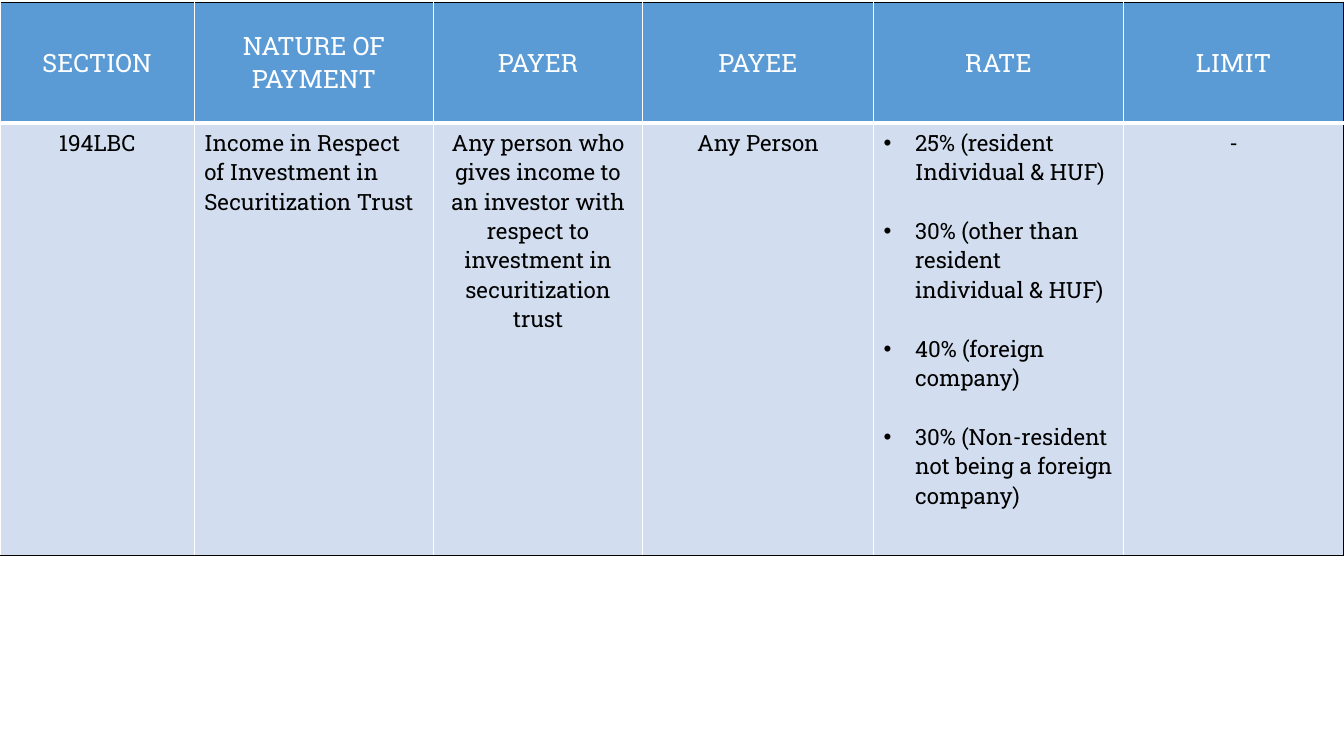
import pptx
import pptx.util
import pptx.dml.color
import pptx.enum.text
import pptx.oxml
import pptx.oxml.ns

PX = 9525  # EMU per px, 96 px to the inch
FONT = "Roboto Slab"
HUES = {"white": "FFFFFF", "black": "000000", "head": "5B9BD5", "body": "D2DEEF"}
ALIGN = pptx.enum.text.PP_ALIGN
ANCHOR = pptx.enum.text.MSO_ANCHOR

WIDTHS = [185, 228, 199, 220, 238, 210]
HEIGHTS = [115, 412]
HEADS = ["SECTION", "NATURE OF PAYMENT", "PAYER", "PAYEE", "RATE", "LIMIT"]
RATES = [
    "25% (resident Individual & HUF)",
    "30% (other than resident individual & HUF)",
    "40% (foreign company)",
    "30% (Non-resident not being a foreign company)",
]
# Each body cell: its paragraphs and its style
BODY = [
    (["194LBC"], "center"),
    (["Income in Respect of Investment in Securitization Trust"], "left"),
    (["Any person who gives income to an investor with respect to "
      "investment in securitization trust"], "center"),
    (["Any Person"], "center"),
    (RATES, "list"),
    (["-"], "center"),
]


def px(count):
    return pptx.util.Emu(count * PX)


def color(name):
    return pptx.dml.color.RGBColor.from_string(HUES[name])


def edge(cell, sides):
    """Draw borders; sides maps L, R, T, B in that order to (hue, points)."""
    props = cell._tc.get_or_add_tcPr()
    for spot, (side, (hue, size)) in enumerate(sides.items()):
        props.insert(spot, pptx.oxml.parse_xml(
            f'<a:ln{side} {pptx.oxml.ns.nsdecls("a")} w="{size * 12700}">'
            f'<a:solidFill><a:srgbClr val="{HUES[hue]}"/></a:solidFill>'
            f'</a:ln{side}>'))


def bullet(para):
    props = para._p.get_or_add_pPr()
    props.set("marL", str(px(30)))
    props.set("indent", str(px(-30)))
    props.append(pptx.oxml.parse_xml(
        f'<a:buFont {pptx.oxml.ns.nsdecls("a")} typeface="Arial"/>'))
    props.append(pptx.oxml.parse_xml(
        f'<a:buChar {pptx.oxml.ns.nsdecls("a")} char="•"/>'))


def write(cell, lines, style, size, hue):
    frame = cell.text_frame
    for spot, line in enumerate(lines):
        para = frame.add_paragraph() if spot else frame.paragraphs[0]
        para.alignment = ALIGN.CENTER if style == "center" else ALIGN.LEFT
        if spot:
            para.space_before = pptx.util.Pt(21)
        if style == "list":
            bullet(para)
        run = para.add_run()
        run.text = line
        run.font.name = FONT
        run.font.size = pptx.util.Pt(size)
        run.font.bold = False
        run.font.color.rgb = color(hue)


def paint(cell, fill, sides):
    cell.fill.solid()
    cell.fill.fore_color.rgb = color(fill)
    edge(cell, sides)


def grid(slide, left, top, width, height):
    """Place the rate table in the given box."""
    table = slide.shapes.add_table(
        len(HEIGHTS), len(WIDTHS), px(left), px(top), px(width), px(height)).table
    table.first_row = table.horz_banding = False
    for col, size in zip(table.columns, WIDTHS):
        col.width = px(size)
    for row, size in zip(table.rows, HEIGHTS):
        row.height = px(size)

    last = len(WIDTHS) - 1
    for spot, (head, (lines, style)) in enumerate(zip(HEADS, BODY)):
        side = {"L": ("white", 1), "R": ("black" if spot == last else "white", 1)}
        # Header cell
        cell = table.cell(0, spot)
        cell.vertical_anchor = ANCHOR.MIDDLE
        write(cell, [head], "center", 18, "white")
        paint(cell, "head", {**side, "T": ("black", 1), "B": ("white", 3)})
        # Body cell
        cell = table.cell(1, spot)
        write(cell, lines, style, 16, "black")
        paint(cell, "body", {**side, "T": ("white", 1), "B": ("black", 1)})


def main():
    deck = pptx.Presentation()
    deck.slide_width, deck.slide_height = px(1280), px(720)
    slide = deck.slides.add_slide(deck.slide_layouts[6])
    grid(slide, 0, 2, sum(WIDTHS), sum(HEIGHTS))
    deck.save("out.pptx")


if __name__ == "__main__":
    main()
